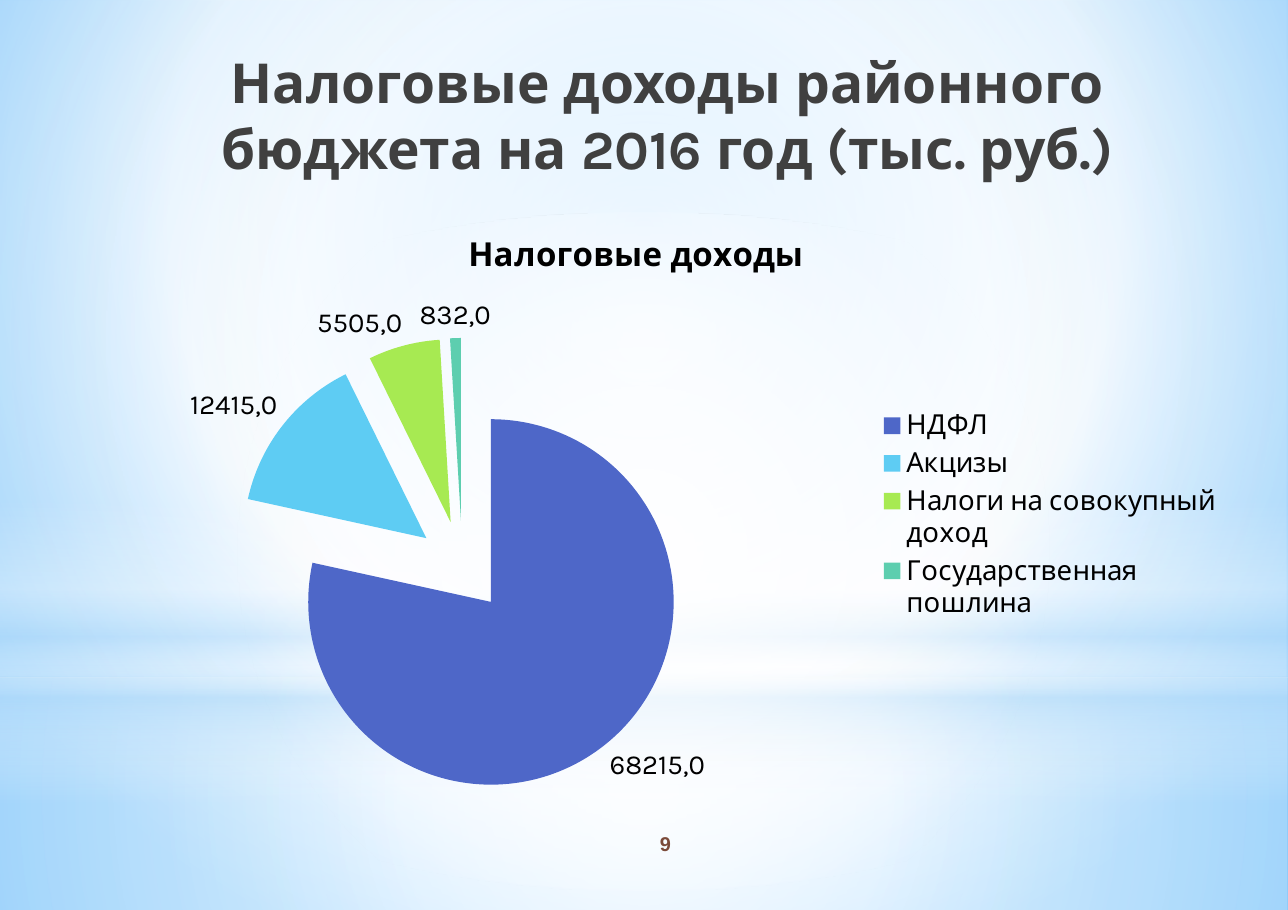
import pptx
import pptx.chart.data
import pptx.dml.color
import pptx.enum.chart
import pptx.enum.shapes
import pptx.enum.text
import pptx.oxml
import pptx.oxml.ns
import pptx.util
from dataclasses import dataclass

WIDTH, HEIGHT = 11.69, 8.26

TITLE = "Налоговые доходы районного бюджета на 2016 год (тыс. руб.)"
PAGE = "9"
SERIES = "Налоговые доходы"
TAXES = [
    ("НДФЛ", 68215, "4E67C8"),
    ("Акцизы", 12415, "5ECCF3"),
    ("Налоги на совокупный доход", 5505, "A7EA52"),
    ("Государственная пошлина", 832, "5DCEAF"),
]


@dataclass(frozen=True)
class Theme:
    font: str = "Karla"
    page_font: str = "Arial"
    title: str = "404040"
    text: str = "000000"
    page: str = "7B4A3A"
    title_pt: float = 36
    chart_title_pt: float = 21.6
    chart_pt: float = 18
    page_pt: float = 13


THEME = Theme()
CENTRE = (50, 50, 50, 50)
WHITE, SKY = "FFFFFF", "B4DCFA"

# Gradient stops: position %, colour, opacity %
BACKGROUND = [(0, "9ED5FF", 100), (60, WHITE, 100), (100, "5BB9FF", 100)]
BACKGROUND_FOCUS = (20, 10, 20, 60)
HORIZON = 74.46

# Shape, box in % of the slide, stops, focus (None for a vertical gradient)
RECT = pptx.enum.shapes.MSO_SHAPE.RECTANGLE
OVAL = pptx.enum.shapes.MSO_SHAPE.OVAL
GLOWS = [
    (RECT, (0, HORIZON, 100, 100 - HORIZON),
     [(0, WHITE, 91), (37, WHITE, 76), (100, SKY, 79)], CENTRE),
    (RECT, (0, 0, 100, HORIZON),
     [(0, WHITE, 89), (48, WHITE, 62), (100, SKY, 79)], CENTRE),
    (RECT, (0, 54.96, 100, 33.29),
     [(0, WHITE, 0), (29, WHITE, 30), (45, SKY, 40),
      (55, WHITE, 26), (65, SKY, 60), (100, WHITE, 0)], None),
    (OVAL, (0, 23.37, 100, HORIZON),
     [(0, WHITE, 100), (56, WHITE, 0)], CENTRE),
]
TITLE_BOX = (7.27, 4.6, 89.14, 20.22)
CHART_BOX = (2.99, 22.76, 92.81, 67.55)
PAGE_BOX = (41.66, 90.07, 20.02, 5.33)


def place(left, top, width, height):
    """Turn a box in % of the slide into lengths."""
    return [pptx.util.Inches(share * side / 100) for share, side in
            zip((left, top, width, height), (WIDTH, HEIGHT) * 2)]


def rgb(colour):
    return pptx.dml.color.RGBColor.from_string(colour)


def set_gradient(fill, holder, stops, focus):
    """Replace the fill held by an XML element with a gradient."""
    fill.solid()
    gs = "".join(
        f'<a:gs pos="{pos * 1000}"><a:srgbClr val="{colour}">'
        f'<a:alpha val="{opacity * 1000}"/></a:srgbClr></a:gs>'
        for pos, colour, opacity in stops)
    if focus:
        sides = " ".join(f'{side}="{share * 1000}"'
                         for side, share in zip("ltrb", focus))
        course = f'<a:path path="circle"><a:fillToRect {sides}/></a:path>'
    else:
        course = '<a:lin ang="5400000" scaled="0"/>'
    solid = holder.find(pptx.oxml.ns.qn("a:solidFill"))
    holder.replace(solid, pptx.oxml.parse_xml(
        f'<a:gradFill {pptx.oxml.ns.nsdecls("a")} rotWithShape="1">'
        f'<a:gsLst>{gs}</a:gsLst>{course}</a:gradFill>'))


def set_font(font, name, size, colour, bold=False):
    font.name, font.size, font.bold = name, pptx.util.Pt(size), bold
    font.color.rgb = rgb(colour)


def add_text(s, box, text, anchor, *style):
    tf = s.shapes.add_textbox(*place(*box)).text_frame
    tf.word_wrap = True
    tf.vertical_anchor = anchor
    tf.margin_left = tf.margin_right = pptx.util.Inches(0.11)
    tf.margin_top = tf.margin_bottom = pptx.util.Inches(0.06)
    p = tf.paragraphs[0]
    p.alignment = pptx.enum.text.PP_ALIGN.CENTER
    r = p.add_run()
    r.text = text
    set_font(r.font, *style, bold=True)


def add_pie(s):
    data = pptx.chart.data.CategoryChartData()
    data.categories = [name for name, _, _ in TAXES]
    data.add_series(SERIES, [value for _, value, _ in TAXES])
    chart = s.shapes.add_chart(pptx.enum.chart.XL_CHART_TYPE.PIE,
                               *place(*CHART_BOX), data).chart
    set_font(chart.font, THEME.font, THEME.chart_pt, THEME.text)

    chart.has_title = True
    r = chart.chart_title.text_frame.paragraphs[0].add_run()
    r.text = SERIES
    set_font(r.font, THEME.font, THEME.chart_title_pt, THEME.text, bold=True)

    chart.has_legend = True
    chart.legend.position = pptx.enum.chart.XL_LEGEND_POSITION.RIGHT
    chart.legend.include_in_layout = False

    plot = chart.plots[0]
    plot.vary_by_categories = True
    plot.has_data_labels = True
    labels = plot.data_labels
    labels.show_value = True
    labels.show_percentage = False
    labels.number_format = '0",0"'
    labels.number_format_is_linked = False
    labels.position = pptx.enum.chart.XL_LABEL_POSITION.OUTSIDE_END

    pie = plot.series[0]
    for i, (_, _, colour) in enumerate(TAXES):
        fill = pie.points[i].format.fill
        fill.solid()
        fill.fore_color.rgb = rgb(colour)
    pie._element.find(pptx.oxml.ns.qn("c:tx")).addnext(pptx.oxml.parse_xml(
        f'<c:explosion {pptx.oxml.ns.nsdecls("c")} val="25"/>'))


def main():
    prs = pptx.Presentation()
    prs.slide_width = pptx.util.Inches(WIDTH)
    prs.slide_height = pptx.util.Inches(HEIGHT)
    s = prs.slides.add_slide(prs.slide_layouts[6])

    fill = s.background.fill
    fill.solid()
    set_gradient(fill, s.element.xpath(".//p:bgPr")[0],
                 BACKGROUND, BACKGROUND_FOCUS)
    for kind, box, stops, focus in GLOWS:
        sp = s.shapes.add_shape(kind, *place(*box))
        sp.shadow.inherit = False
        sp.line.fill.background()
        set_gradient(sp.fill, sp.element.spPr, stops, focus)

    anchor = pptx.enum.text.MSO_ANCHOR
    add_text(s, TITLE_BOX, TITLE, anchor.TOP,
             THEME.font, THEME.title_pt, THEME.title)
    add_pie(s)
    add_text(s, PAGE_BOX, PAGE, anchor.MIDDLE,
             THEME.page_font, THEME.page_pt, THEME.page)
    prs.save("out.pptx")


if __name__ == "__main__":
    main()
